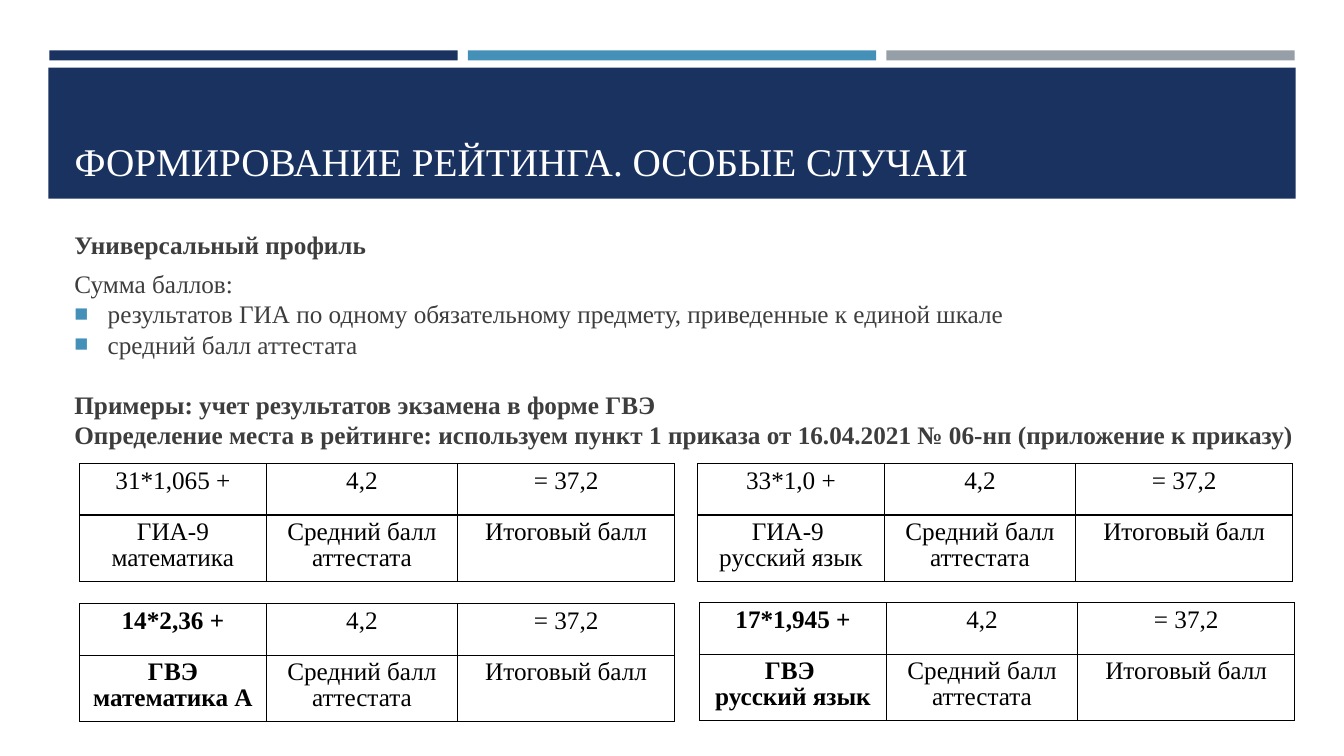
from dataclasses import dataclass

from lxml.etree import SubElement
from pptx import Presentation
from pptx.dml.color import RGBColor
from pptx.enum.shapes import MSO_SHAPE as Preset
from pptx.enum.text import MSO_ANCHOR as Anchor, PP_ALIGN as Align
from pptx.oxml.ns import qn
from pptx.slide import Slide
from pptx.table import _Cell as Cell
from pptx.util import Inches, Pt


@dataclass(frozen=True)
class Theme:
    font: str = "Times New Roman"
    navy: str = "1A3260"
    blue: str = "4590B8"
    gray: str = "969FA7"
    white: str = "FFFFFF"
    body: str = "3D3D3D"
    black: str = "000000"
    title_size: float = 28
    text_size: float = 18
    body_leading: float = 21.6
    cell_leading: float = 0.93


@dataclass(frozen=True)
class Bar:
    left: float
    top: float
    width: float
    height: float
    color: str


@dataclass(frozen=True)
class Line:
    text: str
    bold: bool = False
    bullet: bool = False
    before: float = 0
    after: float = 0


@dataclass(frozen=True)
class Example:
    left: float
    top: float
    score: str
    exam: str
    bold: bool = False


THEME = Theme()
BAR_STEP = 4.15
BARS = [
    Bar(0.49 + BAR_STEP * index, 0.5, 4.05, 0.1, color)
    for index, color in enumerate((THEME.navy, THEME.blue, THEME.gray))
] + [Bar(0.48, 0.67, 12.37, 1.3, THEME.navy)]

TITLE = "ФОРМИРОВАНИЕ РЕЙТИНГА. ОСОБЫЕ СЛУЧАИ"
LINES = [
    Line("Универсальный профиль", bold=True, after=6),
    Line("Сумма баллов:"),
    Line("результатов ГИА по одному обязательному предмету, приведенные к единой шкале", bullet=True),
    Line("средний балл аттестата", bullet=True),
    Line("Примеры: учет результатов экзамена в форме ГВЭ", bold=True, before=THEME.body_leading),
    Line(
        "Определение места в рейтинге: используем пункт 1 приказа "
        "от 16.04.2021 № 06-нп (приложение к приказу)",
        bold=True,
    ),
]

COLUMN_WIDTHS = (1.85, 1.9, 2.15)
ROW_HEIGHTS = (0.51, 0.65)
EXAMPLES = [
    Example(0.79, 4.6, "31*1,065 +", "ГИА-9 математика"),
    Example(6.92, 4.6, "33*1,0 +", "ГИА-9 \nрусский язык"),
    Example(0.79, 5.99, "14*2,36 +", "ГВЭ математика А", bold=True),
    Example(6.94, 5.98, "17*1,945 +", "ГВЭ \nрусский язык", bold=True),
]


def style_runs(para, size: float, color: str, bold: bool = False) -> None:
    for span in para.runs:
        span.font.name = THEME.font
        span.font.size = Pt(size)
        span.font.bold = bold
        span.font.color.rgb = RGBColor.from_string(color)


def draw_bar(page: Slide, bar: Bar) -> None:
    shape = page.shapes.add_shape(
        Preset.RECTANGLE, Inches(bar.left), Inches(bar.top), Inches(bar.width), Inches(bar.height)
    )
    shape.shadow.inherit = False
    shape.fill.solid()
    shape.fill.fore_color.rgb = RGBColor.from_string(bar.color)
    shape.line.fill.background()


def draw_title(page: Slide) -> None:
    title = page.shapes.title
    title.left, title.top = Inches(0.64), Inches(0.77)
    title.width, title.height = Inches(12.06), Inches(1.11)
    frame = title.text_frame
    frame.text = TITLE
    frame.vertical_anchor = Anchor.BOTTOM
    para = frame.paragraphs[0]
    para.alignment = Align.LEFT
    style_runs(para, THEME.title_size, THEME.white)
    page.shapes.element.append(title.element)


def add_bullet(para) -> None:
    properties = para._p.get_or_add_pPr()
    properties.set("marL", str(Inches(0.33)))
    properties.set("indent", str(-Inches(0.33)))
    color = SubElement(properties, qn("a:buClr"))
    SubElement(color, qn("a:srgbClr"), val=THEME.blue)
    SubElement(properties, qn("a:buSzPct"), val="92000")
    SubElement(properties, qn("a:buFont"), typeface=THEME.font)
    SubElement(properties, qn("a:buChar"), char="■")


def draw_body(page: Slide) -> None:
    box = page.shapes.add_textbox(Inches(0.64), Inches(2.28), Inches(12.36), Inches(2.3))
    frame = box.text_frame
    frame.word_wrap = True
    frame.margin_top = 0
    frame.text = "\n".join(line.text for line in LINES)
    for para, line in zip(frame.paragraphs, LINES):
        para.line_spacing = Pt(THEME.body_leading)
        para.space_before = Pt(line.before)
        para.space_after = Pt(line.after)
        style_runs(para, THEME.text_size, THEME.body, line.bold)
        if line.bullet:
            add_bullet(para)


def add_borders(cell: Cell) -> None:
    properties = cell._tc.get_or_add_tcPr()
    for index, side in enumerate(("lnL", "lnR", "lnT", "lnB")):
        border = properties.makeelement(qn(f"a:{side}"), {"w": str(Pt(1))})
        fill = SubElement(border, qn("a:solidFill"))
        SubElement(fill, qn("a:srgbClr"), val=THEME.black)
        properties.insert(index, border)


def fill_cell(cell: Cell, text: str, bold: bool) -> None:
    cell.fill.background()
    cell.text_frame.text = text
    for para in cell.text_frame.paragraphs:
        para.alignment = Align.CENTER
        para.line_spacing = THEME.cell_leading
        style_runs(para, THEME.text_size, THEME.black, bold)
    add_borders(cell)


def draw_example(page: Slide, example: Example) -> None:
    table = page.shapes.add_table(
        len(ROW_HEIGHTS), len(COLUMN_WIDTHS), Inches(example.left), Inches(example.top),
        Inches(sum(COLUMN_WIDTHS)), Inches(sum(ROW_HEIGHTS)),
    ).table
    table.first_row = False
    table.horz_banding = False
    for column, width in zip(table.columns, COLUMN_WIDTHS):
        column.width = Inches(width)
    rows = (
        (example.score, "4,2", "= 37,2"),
        (example.exam, "Средний балл аттестата", "Итоговый балл"),
    )
    for row, height, texts in zip(table.rows, ROW_HEIGHTS, rows):
        row.height = Inches(height)
        for index, (cell, text) in enumerate(zip(row.cells, texts)):
            fill_cell(cell, text, example.bold and index == 0)


def main() -> None:
    deck = Presentation()
    deck.slide_width, deck.slide_height = Inches(13.33), Inches(7.5)
    page = deck.slides.add_slide(deck.slide_layouts[5])
    for bar in BARS:
        draw_bar(page, bar)
    draw_title(page)
    draw_body(page)
    for example in EXAMPLES:
        draw_example(page, example)
    deck.save("out.pptx")


if __name__ == "__main__":
    main()
